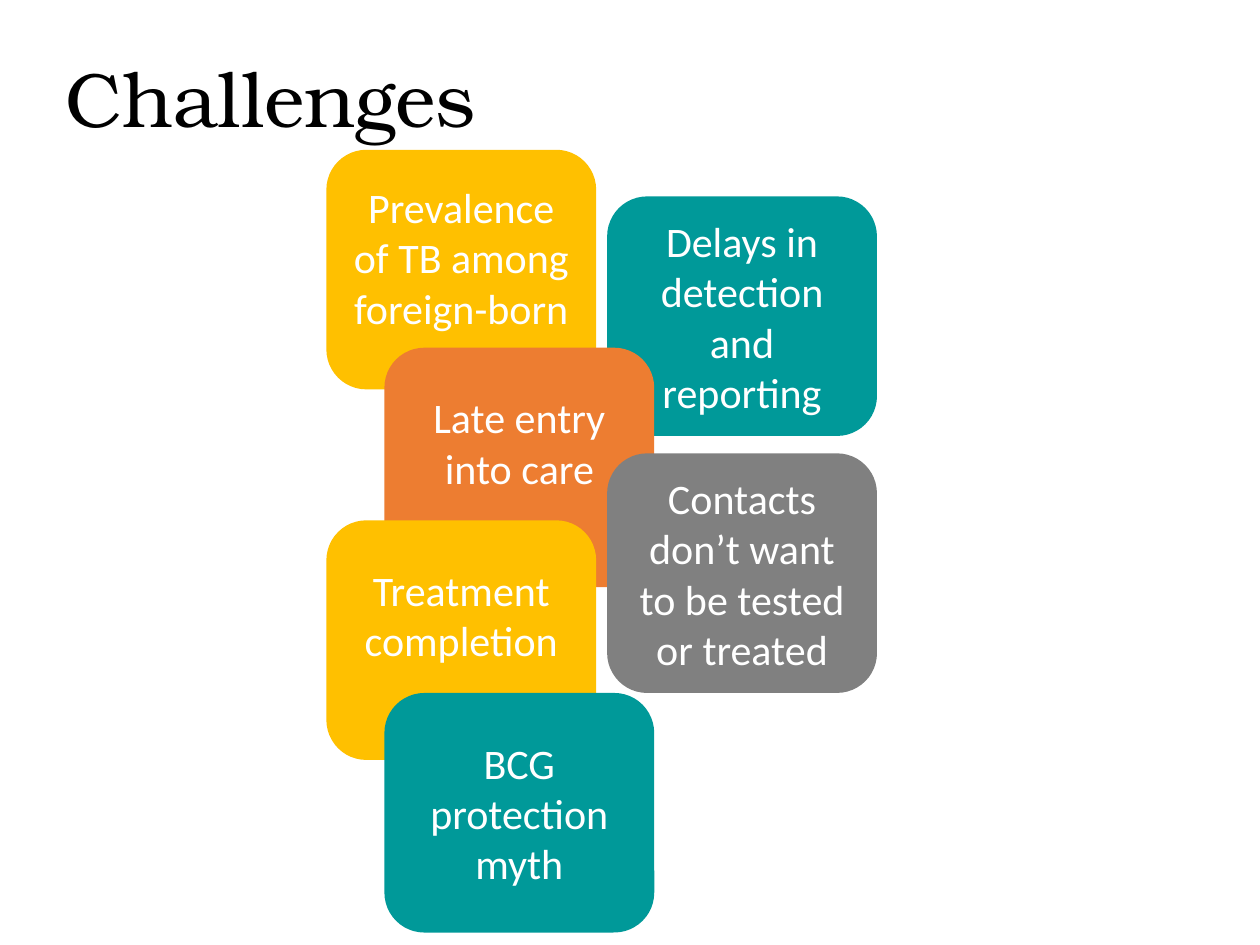
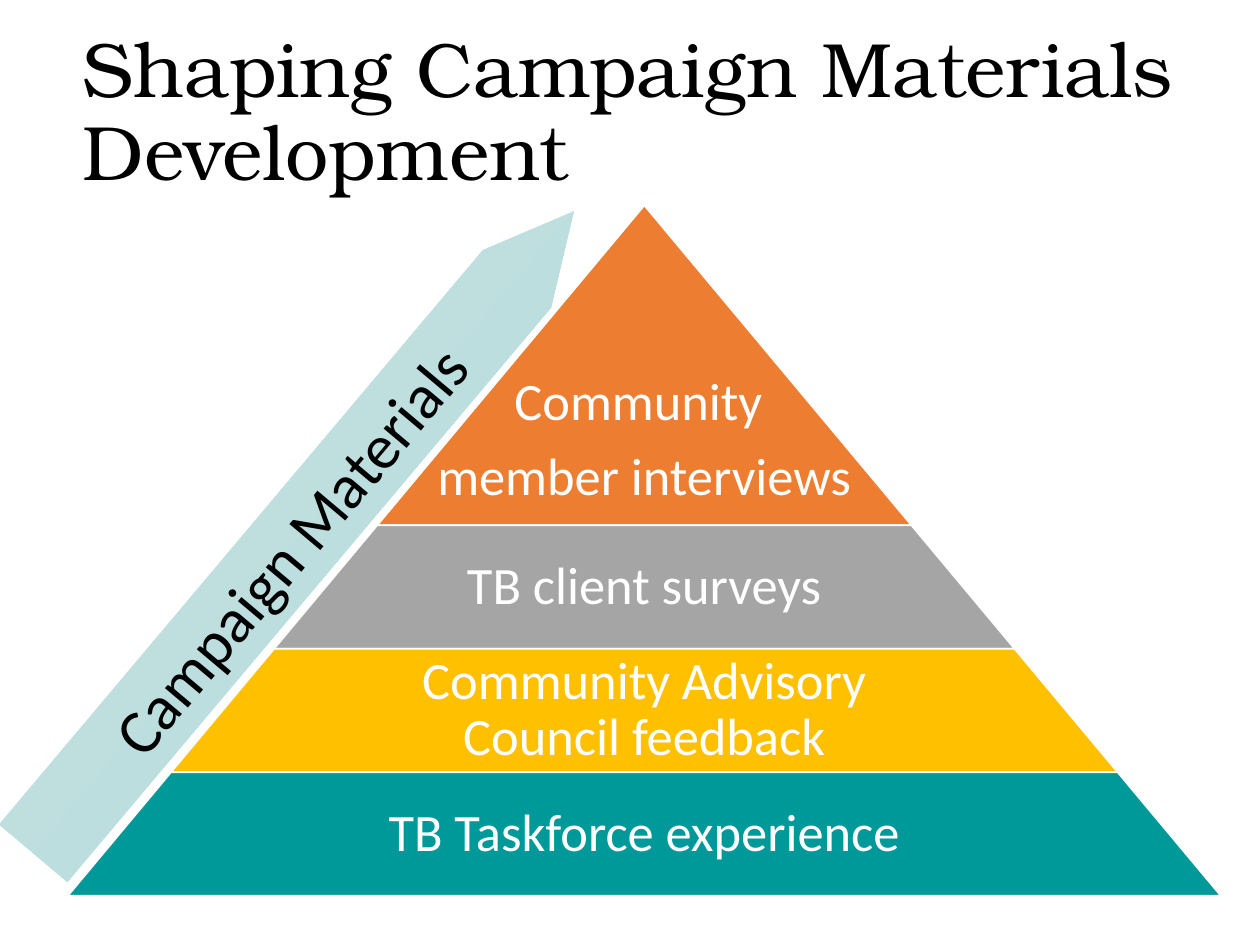
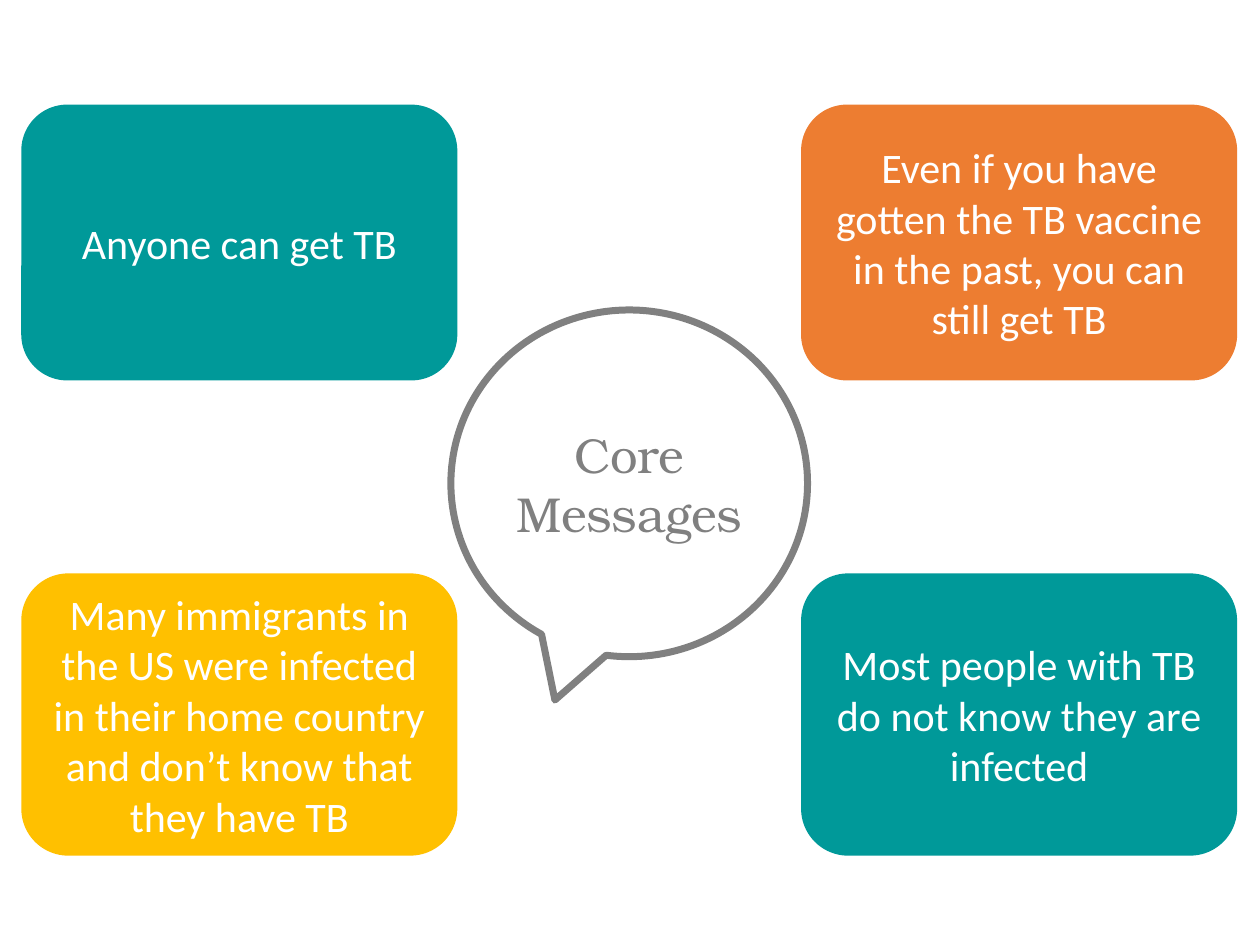
"""Build three slides on TB challenges, campaign materials and core messages."""
from pptx import Presentation
from pptx.dml.color import RGBColor
from pptx.enum import shapes, text
from pptx.util import Cm, Pt

COLORS = {
    "black": "000000", "white": "FFFFFF", "gold": "FFC000", "teal": "009999",
    "orange": "ED7D31", "gray": "808080", "silver": "A5A5A5",
    "mist": "C2E1E0", "haze": "BADCDD",
}
SERIF, SANS = "TeX Gyre Bonum", "Calibri"
MSO = shapes.MSO_SHAPE
ANCHOR = text.MSO_ANCHOR
LEFT, CENTER = text.PP_ALIGN.LEFT, text.PP_ALIGN.CENTER


def write(sp, words, size=24, font=SANS, color="white", align=CENTER,
          anchor=ANCHOR.MIDDLE, inset=(0.25, 0.13, 0.25, 0.13), spacing=None, after=None):
    tf = sp.text_frame
    tf.word_wrap = True
    tf.auto_size = text.MSO_AUTO_SIZE.NONE
    tf.vertical_anchor = anchor
    tf.margin_left, tf.margin_top, tf.margin_right, tf.margin_bottom = map(Cm, inset)
    tf.text = words
    for p in tf.paragraphs:
        p.alignment = align
        p.line_spacing = spacing
        p.space_after = after
        f = p.runs[0].font
        f.name, f.size = font, Pt(size)
        f.color.rgb = RGBColor.from_string(COLORS[color])


def add_shape(s, kind, x, y, w, h, fill=None, line=None, weight=1):
    sp = s.shapes.add_shape(kind, Cm(x), Cm(y), Cm(w), Cm(h))
    sp.shadow.inherit = False
    if fill:
        sp.fill.solid()
        sp.fill.fore_color.rgb = RGBColor.from_string(COLORS[fill])
    else:
        sp.fill.background()
    if line:
        sp.line.color.rgb = RGBColor.from_string(COLORS[line])
        sp.line.width = Pt(weight)
    else:
        sp.line.fill.background()
    return sp


prs = Presentation()
prs.slide_width, prs.slide_height = Cm(25.4), Cm(19.05)
title_only, blank = prs.slide_layouts[5], prs.slide_layouts[6]

titled = []
for words, x, y, w in [
    ("Challenges", 1.07, 0.23, 21.89),
    ("Shaping Campaign Materials Development", 1.42, 0.46, 23.24),
]:
    s = prs.slides.add_slide(title_only)
    title = s.shapes.title
    title.left, title.top, title.width, title.height = Cm(x), Cm(y), Cm(w), Cm(3.68)
    write(title, words, size=44, font=SERIF, color="black", align=LEFT, spacing=0.9)
    titled.append(s)
challenges, shaping = titled

for words, x, y, fill, top, bottom in [
    ("Prevalence of TB among foreign-born", 6.58, 3.02, "gold", 0, 0.51),
    ("Delays in detection and reporting", 12.24, 3.96, "teal", 0.13, 0.13),
    ("Late entry into care", 7.75, 7.01, "orange", 0, 1.02),
    ("Treatment completion", 6.58, 10.49, "gold", 0, 1.02),
    ("Contacts don’t want to be tested or treated", 12.24, 9.14, "gray", 0.13, 0.13),
    ("BCG protection myth", 7.75, 13.97, "teal", 0.13, 0.13),
]:
    card = add_shape(challenges, MSO.ROUNDED_RECTANGLE, x, y, 5.44, 4.83, fill)
    write(card, words, inset=(0.25, top, 0.25, bottom))

arrow = add_shape(shaping, MSO.PENTAGON, -2.34, 9.83, 16.92, 1.8)
arrow.adjustments[0] = 0.99
arrow.rotation = 310.1
arrow.fill.gradient()
arrow.fill.gradient_angle = 270
for stop, name in zip(arrow.fill.gradient_stops, ("mist", "haze")):
    stop.color.rgb = RGBColor.from_string(COLORS[name])
write(arrow, "Campaign Materials", size=36, color="black", anchor=ANCHOR.TOP)

apex_x, apex_y, slope = 12.99, 4.14, 0.835
y = apex_y
for words, h, fill, share, top in [
    ("Community \nmember interviews", 6.45, "orange", 1, 3.17),
    ("TB client surveys", 2.49, "silver", 0.65, 0.1),
    ("Community Advisory Council feedback", 2.49, "gold", 0.65, 0.1),
    ("TB Taskforce experience", 2.49, "teal", 0.65, 0.1),
]:
    w = 2 * slope * (y + h - apex_y)
    tier = add_shape(shaping, MSO.TRAPEZOID, apex_x - w / 2, y, w, h, fill, "white")
    tier.adjustments[0] = slope
    label_w = w * share
    label = shaping.shapes.add_textbox(Cm(apex_x - label_w / 2), Cm(y), Cm(label_w), Cm(h))
    write(label, words, size=30, inset=(0.1, top, 0.1, 0.1), spacing=0.9, after=Pt(10.5))
    y += h

core = prs.slides.add_slide(blank)
left, right = 0.43, 16.15
upper, lower = (2.11, 5.56), (11.56, 5.69)
for words, x, (y, h), fill in [
    ("Anyone can get TB", left, upper, "teal"),
    ("Even if you have gotten the TB vaccine in the past, you can still get TB",
     right, upper, "orange"),
    ("Most people with TB do not know they are infected", right, lower, "teal"),
    ("Many immigrants in the US were infected in their home country "
     "and don’t know that they have TB", left, lower, "gold"),
]:
    write(add_shape(core, MSO.ROUNDED_RECTANGLE, x, y, 8.79, h, fill), words)

bubble = add_shape(core, MSO.OVAL_CALLOUT, 9.09, 6.25, 7.19, 6.99, line="gray", weight=4)
write(bubble, "Core Messages", size=28, font=SERIF, color="gray")

prs.save("out.pptx")
